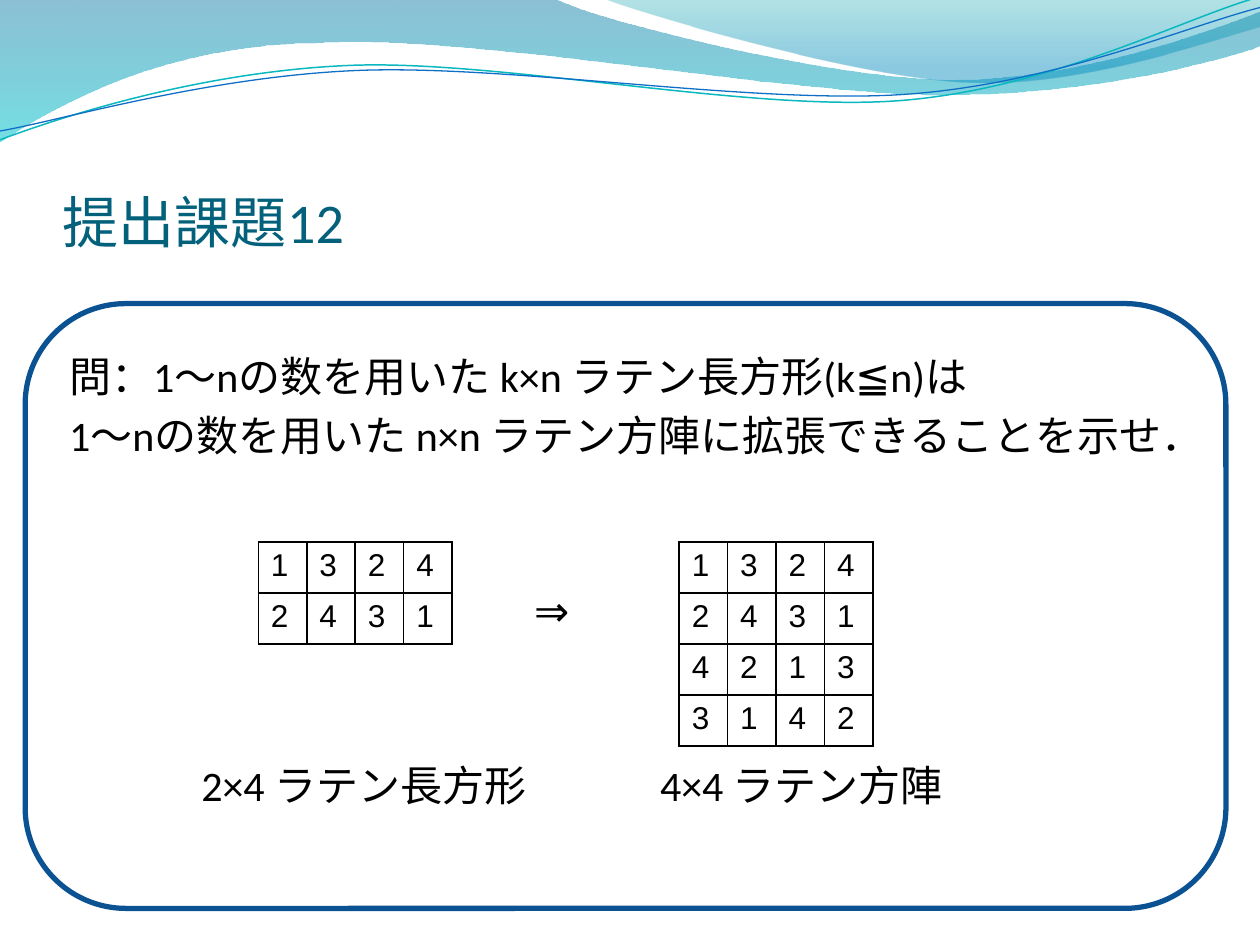
from dataclasses import dataclass
from typing import Optional

from lxml.etree import SubElement
from pptx import Presentation
from pptx.dml.color import RGBColor
from pptx.enum.shapes import MSO_SHAPE
from pptx.enum.text import MSO_ANCHOR
from pptx.oxml.ns import qn
from pptx.util import Inches, Pt

BLACK = RGBColor(0x00, 0x00, 0x00)
TITLE_TEAL = RGBColor(0x04, 0x61, 0x7B)
FRAME_BLUE = RGBColor(0x0B, 0x52, 0x92)
LINE_TEAL = RGBColor(0x0A, 0xB8, 0xBF)
LINE_BLUE = RGBColor(0x0F, 0x6F, 0xC6)
DEEP_BLUE = RGBColor(0x00, 0x74, 0xA1)
CYAN = RGBColor(0x00, 0xC6, 0xCF)
SEA_GREEN = RGBColor(0x00, 0xA1, 0xA9)
SKY_BLUE = RGBColor(0x00, 0x8B, 0xBF)


@dataclass
class GradientStop:
    position: float
    color: RGBColor
    opacity: int  # percent


@dataclass
class Wave:
    start: tuple
    segments: list  # (x, y) is a line, six numbers are a Bezier curve
    stops: tuple = ()
    line_color: Optional[RGBColor] = None
    line_width: float = 0


@dataclass
class TextLine:
    text: str
    space_before: float = 0  # points
    tabs: tuple = ()  # inches


@dataclass
class TextBlock:
    left: float
    top: float
    width: float
    height: float
    lines: list
    size: float
    color: RGBColor


@dataclass
class LatinGrid:
    left: float
    rows: list


WAVES = [
    Wave((0, -0.01),
         [(4.4, -0.01), (4.76, 0.17, 6.64, 0.63, 7.58, 0.63),
          (8.53, 0.63, 9.58, 0.26, 10, 0.09), (10.01, 0.36),
          (9.83, 0.44, 8.7, 0.76, 7.46, 0.75),
          (6.22, 0.75, 3.82, 0.28, 2.57, 0.34),
          (1.29, 0.35, 0.46, 0.83, -0.01, 1.13)],
         stops=(GradientStop(0, DEEP_BLUE, 45), GradientStop(1, CYAN, 55))),
    Wave((4.79, -0.01),
         [(5.09, 0.11, 6.82, 0.62, 7.69, 0.65),
          (8.56, 0.69, 9.61, 0.32, 10, 0.21), (10, 0)],
         stops=(GradientStop(0, SEA_GREEN, 30), GradientStop(0.8, SKY_BLUE, 45))),
    Wave((0, 1.11),
         [(0.48, 0.93, 1.58, 0.57, 2.77, 0.52),
          (3.95, 0.47, 5.93, 0.89, 7.13, 0.8),
          (8.33, 0.71, 9.38, 0.15, 9.98, -0.02)],
         line_color=LINE_TEAL, line_width=0.85),
    Wave((0, 1.04),
         [(0.47, 0.96, 1.64, 0.61, 2.83, 0.56),
          (4.03, 0.51, 5.97, 0.83, 7.17, 0.75),
          (8.36, 0.67, 9.41, 0.21, 10, 0.06)],
         line_color=LINE_BLUE, line_width=0.75),
]

TITLE = TextBlock(0.5, 0.77, 9, 1.25, [TextLine("提出課題12")], 32, TITLE_TEAL)
PROBLEM = TextBlock(0.45, 2.73, 9.14, 4.8, [
    TextLine("問：1～nの数を用いた k×n ラテン長方形(k≦n)は", 4),
    TextLine("1～nの数を用いた n×n ラテン方陣に拡張できることを示せ．", 5),
    TextLine("\t⇒", 71.5, (3.69,)),
    TextLine("\t2×4 ラテン長方形\t4×4 ラテン方陣", 71, (1.05, 4.69)),
], 24, BLACK)

GRIDS = [
    LatinGrid(2.05, ["1324", "2431"]),
    LatinGrid(5.39, ["1324", "2431", "4213", "3142"]),
]
GRID_TOP, COLUMN_WIDTH, ROW_HEIGHT = 4.3, 0.385, 0.405


def bend_segments(shape, segments: list) -> None:
    """Replace straight segments by Bezier curves where control points are given."""
    outline = next(shape._element.spPr.iter(qn("a:path")))
    for line, segment in zip(outline.findall(qn("a:lnTo")), segments):
        if len(segment) == 2:
            continue
        curve = SubElement(outline, qn("a:cubicBezTo"))
        for x, y in zip(segment[::2], segment[1::2]):
            SubElement(curve, qn("a:pt"), x=str(Inches(x) - shape.left),
                       y=str(Inches(y) - shape.top))
        outline.replace(line, curve)


def draw_wave(slide, wave: Wave) -> None:
    ends = [(Inches(segment[-2]), Inches(segment[-1])) for segment in wave.segments]
    builder = slide.shapes.build_freeform(*map(Inches, wave.start))
    builder.add_line_segments(ends, close=bool(wave.stops))
    shape = builder.convert_to_shape()
    bend_segments(shape, wave.segments)
    shape.shadow.inherit = False
    if not wave.stops:
        shape.fill.background()
        shape.line.color.rgb = wave.line_color
        shape.line.width = Pt(wave.line_width)
        return
    shape.line.fill.background()
    shape.fill.gradient()
    shape.fill.gradient_angle = 270  # top to bottom
    for gradient_stop, stop in zip(shape.fill.gradient_stops, wave.stops):
        gradient_stop.position = stop.position
        gradient_stop.color.rgb = stop.color
    colors = shape._element.spPr.iter(qn("a:srgbClr"))
    for color, stop in zip(colors, wave.stops):
        SubElement(color, qn("a:alpha"), val=str(stop.opacity * 1000))


def draw_text(slide, block: TextBlock):
    box = slide.shapes.add_textbox(Inches(block.left), Inches(block.top),
                                   Inches(block.width), Inches(block.height))
    text_frame = box.text_frame
    text_frame.word_wrap = True
    text_frame.text = "\n".join(line.text for line in block.lines)
    for paragraph, line in zip(text_frame.paragraphs, block.lines):
        paragraph.space_before = Pt(line.space_before)
        if line.tabs:
            tab_list = SubElement(paragraph._p.get_or_add_pPr(), qn("a:tabLst"))
            for tab in line.tabs:
                SubElement(tab_list, qn("a:tab"), pos=str(Inches(tab)), algn="l")
        for run in paragraph.runs:
            run.font.name = "Calibri"
            run.font.size = Pt(block.size)
            run.font.color.rgb = block.color
    return text_frame


def format_cell(cell, text: str) -> None:
    cell.text_frame.text = text
    font = cell.text_frame.paragraphs[0].runs[0].font
    font.name = "Arial"
    font.size = Pt(18)
    font.color.rgb = BLACK
    properties = cell._tc.get_or_add_tcPr()
    for side in ("a:lnL", "a:lnR", "a:lnT", "a:lnB"):
        border = SubElement(properties, qn(side), w=str(Pt(1)))
        solid_fill = SubElement(border, qn("a:solidFill"))
        SubElement(solid_fill, qn("a:srgbClr"), val=str(BLACK))
    cell.fill.background()


def draw_grid(slide, grid: LatinGrid) -> None:
    row_count, column_count = len(grid.rows), len(grid.rows[0])
    table = slide.shapes.add_table(
        row_count, column_count, Inches(grid.left), Inches(GRID_TOP),
        Inches(COLUMN_WIDTH * column_count), Inches(ROW_HEIGHT * row_count)).table
    table.first_row = table.horz_banding = False
    for row_index, digits in enumerate(grid.rows):
        for column_index, digit in enumerate(digits):
            format_cell(table.cell(row_index, column_index), digit)


def main() -> None:
    presentation = Presentation()
    presentation.slide_width, presentation.slide_height = Inches(10), Inches(7.5)
    slide = presentation.slides.add_slide(presentation.slide_layouts[6])

    # Wave decoration
    for wave in WAVES:
        draw_wave(slide, wave)

    # Title
    title_frame = draw_text(slide, TITLE)
    title_frame.vertical_anchor = MSO_ANCHOR.BOTTOM
    title_frame.margin_left = title_frame.margin_right = title_frame.margin_bottom = 0

    # Rounded frame around the problem
    frame = slide.shapes.add_shape(MSO_SHAPE.ROUNDED_RECTANGLE, Inches(0.2),
                                   Inches(2.41), Inches(9.53), Inches(4.8))
    frame.shadow.inherit = False
    frame.fill.background()
    frame.line.color.rgb = FRAME_BLUE
    frame.line.width = Pt(3)

    # Problem statement, then the Latin rectangle and Latin square
    draw_text(slide, PROBLEM)
    for grid in GRIDS:
        draw_grid(slide, grid)

    presentation.save("out.pptx")


if __name__ == "__main__":
    main()
